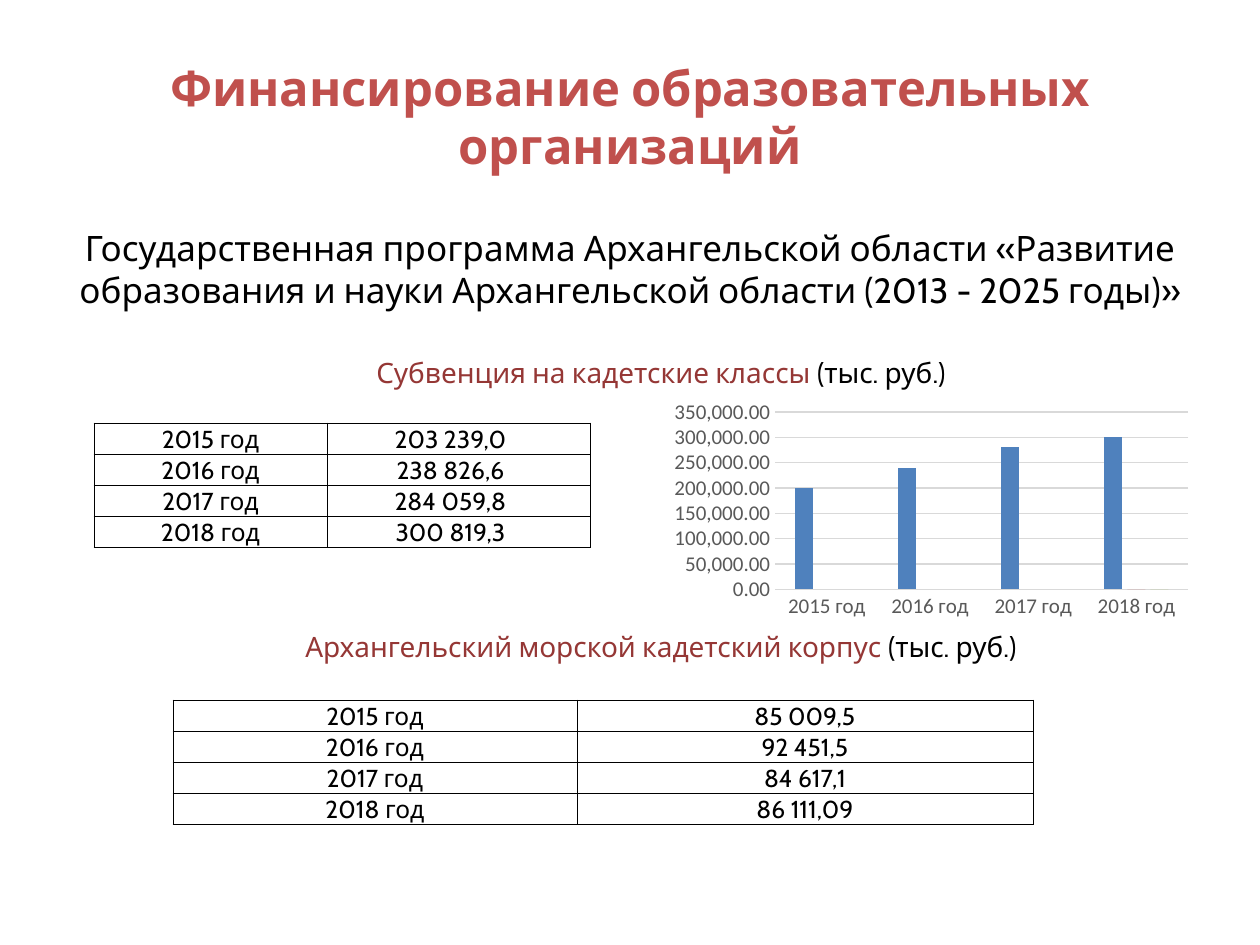
from lxml.etree import SubElement
from pptx import Presentation
from pptx.chart.data import CategoryChartData
from pptx.dml.color import RGBColor
from pptx.enum.chart import XL_CHART_TYPE, XL_TICK_MARK
from pptx.enum.text import MSO_ANCHOR, PP_ALIGN
from pptx.oxml import parse_xml
from pptx.oxml.ns import nsdecls, qn
from pptx.util import Emu, Pt

PX = 914400 // 126
COLORS = {
    "title": "C0504D", "caption": "953735", "text": "000000",
    "axis": "595959", "grid": "D9D9D9",
    "series": ["4F81BD", "C0504D", "9BBB59"],
}
YEARS = ["2015 год", "2016 год", "2017 год", "2018 год"]
SUBVENTIONS = ["203 239,0", "238 826,6", "284 059,8", "300 819,3"]
CORPS_FUNDING = ["85 009,5", "92 451,5", "84 617,1", "86 111,09"]
ROUNDED_SUBVENTIONS = [200000, 240000, 280000, 300000]
LAST_YEAR_ZERO = [None, None, None, 0]


def px(*lengths):
    return [Emu(length * PX) for length in lengths]


def rgb(color):
    return RGBColor.from_string(color)


class FinanceSlide:
    font = "Cabin"

    def __init__(self, presentation):
        self.slide = presentation.slides.add_slide(presentation.slide_layouts[5])

    def style(self, run, size, color, bold=False):
        run.font.name = self.font
        run.font.size = Pt(size)
        run.font.bold = bold
        run.font.color.rgb = rgb(color)

    def title(self, text, box):
        title = self.slide.shapes.title
        title.left, title.top, title.width, title.height = px(*box)
        frame = title.text_frame
        frame.text = text
        frame.vertical_anchor = MSO_ANCHOR.MIDDLE
        heading = frame.paragraphs[0]
        heading.alignment = PP_ALIGN.CENTER
        self.style(heading.runs[0], 28, COLORS["title"], bold=True)

    def text(self, parts, box, size, anchor=MSO_ANCHOR.TOP):
        """Add one centred paragraph from (text, colour) parts."""
        frame = self.slide.shapes.add_textbox(*px(*box)).text_frame
        frame.word_wrap = True
        frame.vertical_anchor = anchor
        paragraph = frame.paragraphs[0]
        paragraph.alignment = PP_ALIGN.CENTER
        for words, color in parts:
            run = paragraph.add_run()
            run.text = words
            self.style(run, size, color)

    def caption(self, subject, top):
        parts = [(subject, COLORS["caption"]), (" (тыс. руб.)", COLORS["text"])]
        self.text(parts, (125, top, 1072, 40), 16, MSO_ANCHOR.MIDDLE)

    def border(self, cell):
        properties = cell._tc.get_or_add_tcPr()
        for position, side in enumerate(("lnL", "lnR", "lnT", "lnB")):
            properties.insert(position, parse_xml(
                f'<a:{side} {nsdecls("a")} w="6350"><a:solidFill>'
                f'<a:srgbClr val="{COLORS["text"]}"/></a:solidFill></a:{side}>'))

    def table(self, amounts, left, top, widths, height=125, amount_inset=1):
        box = px(left, top, sum(widths), height)
        table = self.slide.shapes.add_table(len(amounts), 2, *box).table
        table.first_row = table.horz_banding = False
        for column, width in zip(table.columns, px(*widths)):
            column.width = width
        for row, record in enumerate(zip(YEARS, amounts)):
            for column, value in enumerate(record):
                cell = table.cell(row, column)
                cell.text = value
                cell.fill.background()
                cell.vertical_anchor = MSO_ANCHOR.BOTTOM
                right = amount_inset if column else 1
                (cell.margin_left, cell.margin_right,
                 cell.margin_top, cell.margin_bottom) = px(1, right, 1, 0)
                paragraph = cell.text_frame.paragraphs[0]
                paragraph.alignment = PP_ALIGN.CENTER
                self.style(paragraph.runs[0], 14, COLORS["text"])
                self.border(cell)

    def chart(self, series, box, plot_layout):
        data = CategoryChartData(number_format="#,##0.00")
        data.categories = YEARS
        for number, values in enumerate(series, 1):
            data.add_series(f"Series {number}", values)
        chart = self.slide.shapes.add_chart(
            XL_CHART_TYPE.COLUMN_CLUSTERED, *px(*box), data).chart
        chart.has_title = chart.has_legend = False
        chart.font.name = "Calibri"
        chart.font.size = Pt(10)

        plot = chart.plots[0]
        plot.gap_width, plot.overlap = 219, -27
        plot.vary_by_categories = False
        for bars, color in zip(plot.series, COLORS["series"]):
            bars.invert_if_negative = False
            bars.format.fill.solid()
            bars.format.fill.fore_color.rgb = rgb(color)

        years, amounts = chart.category_axis, chart.value_axis
        for axis in (years, amounts):
            axis.major_tick_mark = axis.minor_tick_mark = XL_TICK_MARK.NONE
            labels = axis.tick_labels.font
            labels.name, labels.size = "Calibri", Pt(12)
            labels.color.rgb = rgb(COLORS["axis"])
        amounts.maximum_scale = 350000
        amounts.major_unit = 50000
        amounts.tick_labels.number_format = "#,##0.00"
        amounts.tick_labels.number_format_is_linked = False
        amounts.format.line.fill.background()
        for line in (years.format.line, amounts.major_gridlines.format.line):
            line.color.rgb = rgb(COLORS["grid"])
            line.width = Pt(0.75)
        self.place_plot(chart, plot_layout)

    def place_plot(self, chart, fractions):
        plot_area = chart._chartSpace.chart.plotArea
        for layout in plot_area.findall(qn("c:layout")):
            plot_area.remove(layout)
        layout = parse_xml(f'<c:layout {nsdecls("c")}><c:manualLayout/></c:layout>')
        settings = [("layoutTarget", "inner"), ("xMode", "edge"), ("yMode", "edge")]
        settings += zip("xywh", fractions)
        for tag, value in settings:
            SubElement(layout[0], qn(f"c:{tag}")).set("val", str(value))
        plot_area.insert(0, layout)


def main():
    presentation = Presentation()
    presentation.slide_width, presentation.slide_height = px(1260, 945)
    page = FinanceSlide(presentation)
    page.title("Финансирование образовательных организаций", (63, 37, 1134, 158))
    programme = ("Государственная программа Архангельской области «Развитие "
                 "образования и науки Архангельской области (2013 - 2025 годы)»")
    page.text([(programme, COLORS["text"])], (63, 220, 1134, 100), 20)

    page.caption("Субвенция на кадетские классы", 352)
    page.table(SUBVENTIONS, 94, 423, (233, 263), amount_inset=17)
    page.caption("Архангельский морской кадетский корпус", 626)
    page.table(CORPS_FUNDING, 173, 700, (404, 456))

    page.chart([ROUNDED_SUBVENTIONS, LAST_YEAR_ZERO, LAST_YEAR_ZERO],
               (610, 354, 590, 277), (0.28, 0.21, 0.7, 0.64))
    presentation.save("out.pptx")


if __name__ == "__main__":
    main()
